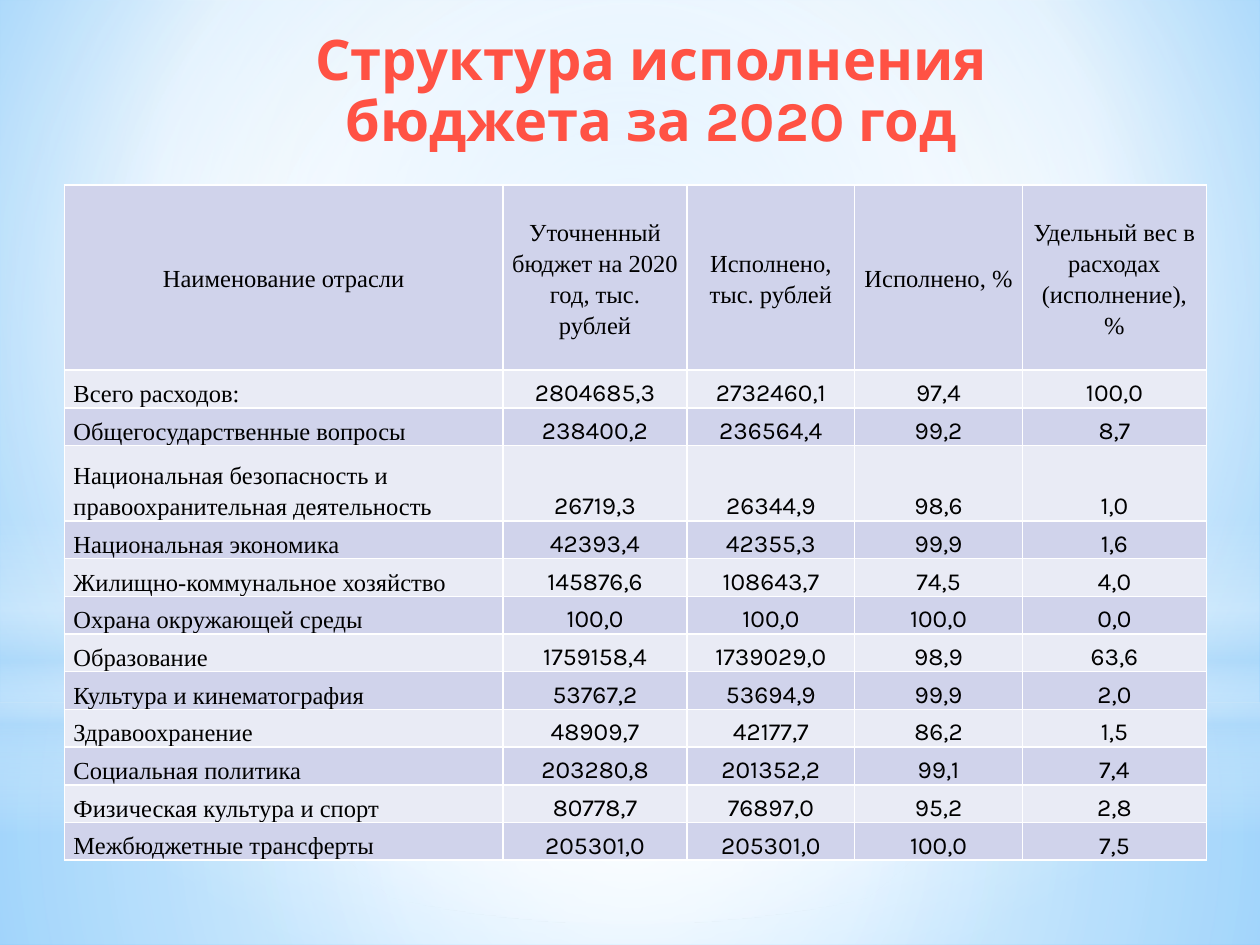
from typing import NamedTuple

from lxml import etree
from pptx import Presentation
from pptx import util as u
from pptx.dml.color import RGBColor
from pptx.enum import shapes, text
from pptx.oxml.ns import qn

WHITE = RGBColor(0xFF, 0xFF, 0xFF)
BLACK = RGBColor(0x00, 0x00, 0x00)
SKY = RGBColor(0x9E, 0xD5, 0xFF)
AZURE = RGBColor(0x5B, 0xB9, 0xFF)
HAZE = RGBColor(0xB4, 0xDC, 0xFA)
DARK_RED = RGBColor(0x8A, 0x13, 0x00)
CORAL = RGBColor(0xFF, 0x52, 0x44)
PINK = RGBColor(0xFF, 0xF0, 0xF0)
ROW_DARK = RGBColor(0xD0, 0xD3, 0xEB)
ROW_LIGHT = RGBColor(0xE9, 0xEB, 0xF5)

SERIF, SANS = "Times New Roman", "Karla"
CENTER = (50, 50, 50, 50)


class Stop(NamedTuple):
    pos: int
    color: RGBColor
    alpha: int = 100


class Gradient(NamedTuple):
    stops: list[Stop]
    focus: tuple[int, int, int, int] | None = None  # None: runs top to bottom


class Glow(NamedTuple):
    kind: shapes.MSO_SHAPE
    top: float
    height: float
    gradient: Gradient


BACKDROP = Gradient([Stop(0, SKY), Stop(60, WHITE), Stop(100, AZURE)], (20, 10, 20, 60))
TITLE_FILL = Gradient([Stop(0, DARK_RED), Stop(78, CORAL), Stop(100, PINK)])
RECT, OVAL = shapes.MSO_SHAPE.RECTANGLE, shapes.MSO_SHAPE.OVAL
GLOWS = [
    Glow(RECT, 14.17, 4.88, Gradient(
        [Stop(0, WHITE, 91), Stop(37, WHITE, 76), Stop(100, HAZE, 79)], CENTER)),
    Glow(RECT, 0, 14.17, Gradient(
        [Stop(0, WHITE, 89), Stop(48, WHITE, 62), Stop(100, HAZE, 79)], CENTER)),
    Glow(RECT, 10.46, 6.35, Gradient(
        [Stop(0, WHITE, 0), Stop(29, WHITE, 30), Stop(45, HAZE, 40),
         Stop(55, WHITE, 26), Stop(65, HAZE, 60), Stop(100, WHITE, 0)])),
    Glow(OVAL, 4.45, 14.17, Gradient([Stop(0, WHITE), Stop(56, WHITE, 0)], CENTER)),
]

HEADER = ["Наименование отрасли", "Уточненный бюджет на 2020 год, тыс. рублей",
          "Исполнено, тыс. рублей", "Исполнено, %",
          "Удельный вес в расходах (исполнение), %"]
BUDGET = [
    ("Всего расходов:", "2804685,3", "2732460,1", "97,4", "100,0"),
    ("Общегосударственные вопросы", "238400,2", "236564,4", "99,2", "8,7"),
    ("Национальная безопасность и правоохранительная деятельность",
     "26719,3", "26344,9", "98,6", "1,0"),
    ("Национальная экономика", "42393,4", "42355,3", "99,9", "1,6"),
    ("Жилищно-коммунальное хозяйство", "145876,6", "108643,7", "74,5", "4,0"),
    ("Охрана окружающей среды", "100,0", "100,0", "100,0", "0,0"),
    ("Образование", "1759158,4", "1739029,0", "98,9", "63,6"),
    ("Культура и кинематография", "53767,2", "53694,9", "99,9", "2,0"),
    ("Здравоохранение", "48909,7", "42177,7", "86,2", "1,5"),
    ("Социальная политика", "203280,8", "201352,2", "99,1", "7,4"),
    ("Физическая культура и спорт", "80778,7", "76897,0", "95,2", "2,8"),
    ("Межбюджетные трансферты", "205301,0", "205301,0", "100,0", "7,5"),
]
COLUMN_WIDTHS = [8.84, 3.71, 3.38, 3.38, 3.71]
HEADER_HEIGHT, ROW_HEIGHT, TALL_ROW = 3.73, 0.76, 3


def set_attrs(target, values: dict) -> None:
    for name, value in values.items():
        setattr(target, name, value)


def add_child(parent, tag: str, **attrs):
    return etree.SubElement(parent, qn(tag), {k: str(v) for k, v in attrs.items()})


def apply_gradient(element, gradient: Gradient) -> None:
    """Swap the solid fill inside an element for a gradient."""
    solid = element.find(".//" + qn("a:solidFill"))
    grad = etree.Element(qn("a:gradFill"), rotWithShape="1")
    stops = add_child(grad, "a:gsLst")
    for stop in gradient.stops:
        gs = add_child(stops, "a:gs", pos=stop.pos * 1000)
        color = add_child(gs, "a:srgbClr", val=stop.color)
        if stop.alpha < 100:
            add_child(color, "a:alpha", val=stop.alpha * 1000)
    if gradient.focus:
        circle = add_child(grad, "a:path", path="circle")
        sides = {k: v * 1000 for k, v in zip("ltrb", gradient.focus)}
        add_child(circle, "a:fillToRect", **sides)
    else:
        add_child(grad, "a:lin", ang=5400000, scaled=0)
    solid.getparent().replace(solid, grad)


def add_glow(s, glow: Glow) -> None:
    sp = s.shapes.add_shape(glow.kind, 0, u.Cm(glow.top), u.Cm(25.4), u.Cm(glow.height))
    sp.shadow.inherit = False
    sp.line.fill.background()
    sp.fill.solid()
    sp.fill.fore_color.rgb = WHITE
    apply_gradient(sp._element, glow.gradient)


def add_title(s, title: str) -> None:
    sp = s.shapes.add_textbox(u.Cm(4.09), u.Cm(0.53), u.Cm(18.08), u.Cm(2.59))
    tf = sp.text_frame
    set_attrs(tf, {"word_wrap": True, "vertical_anchor": text.MSO_ANCHOR.TOP})
    p = tf.paragraphs[0]
    set_attrs(p, {"alignment": text.PP_ALIGN.CENTER, "line_spacing": 0.9})
    r = p.add_run()
    r.text = title
    set_attrs(r.font, {"name": SANS, "size": u.Pt(32), "bold": True})
    r.font.color.rgb = CORAL
    apply_gradient(r._r, TITLE_FILL)


def add_borders(cell) -> None:
    tc_pr = cell._tc.get_or_add_tcPr()
    for index, side in enumerate("LRTB"):
        line = etree.Element(qn(f"a:ln{side}"), w=str(u.Pt(1)))
        add_child(add_child(line, "a:solidFill"), "a:srgbClr", val=WHITE)
        tc_pr.insert(index, line)


def fill_cell(cell, value: str, row: int, col: int) -> None:
    header, label = row == 0, col == 0
    anchor = text.MSO_ANCHOR.MIDDLE if header else text.MSO_ANCHOR.BOTTOM
    set_attrs(cell, {"margin_left": u.Cm(0.18), "margin_right": u.Cm(0.18),
                     "margin_top": 0, "margin_bottom": 0, "vertical_anchor": anchor})
    cell.fill.solid()
    cell.fill.fore_color.rgb = ROW_LIGHT if row % 2 else ROW_DARK
    add_borders(cell)
    p = cell.text_frame.paragraphs[0]
    left = label and not header
    set_attrs(p, {"alignment": text.PP_ALIGN.LEFT if left else text.PP_ALIGN.CENTER,
                  "line_spacing": 1.15})
    r = p.add_run()
    r.text = value
    set_attrs(r.font, {"name": SERIF if header or label else SANS,
                       "size": u.Pt(14), "bold": False})
    r.font.color.rgb = BLACK


def add_budget_table(s) -> None:
    rows = [HEADER, *BUDGET]
    heights = [HEADER_HEIGHT] + [ROW_HEIGHT] * len(BUDGET)
    heights[TALL_ROW] *= 2
    table = s.shapes.add_table(len(rows), len(HEADER), u.Cm(1.3), u.Cm(3.73),
                               u.Cm(sum(COLUMN_WIDTHS)), u.Cm(sum(heights))).table
    for column, width in zip(table.columns, COLUMN_WIDTHS):
        column.width = u.Cm(width)
    for i, (values, height) in enumerate(zip(rows, heights)):
        table.rows[i].height = u.Cm(height)
        for j, value in enumerate(values):
            fill_cell(table.cell(i, j), value, i, j)


def main() -> None:
    prs = Presentation()
    set_attrs(prs, {"slide_width": u.Cm(25.4), "slide_height": u.Cm(19.05)})
    s = prs.slides.add_slide(prs.slide_layouts[6])

    # Background and soft light layers
    s.background.fill.solid()
    s.background.fill.fore_color.rgb = WHITE
    apply_gradient(s._element, BACKDROP)
    for glow in GLOWS:
        add_glow(s, glow)

    # Title and budget table
    add_title(s, "Структура исполнения бюджета за 2020 год")
    add_budget_table(s)
    prs.save("out.pptx")


if __name__ == "__main__":
    main()
